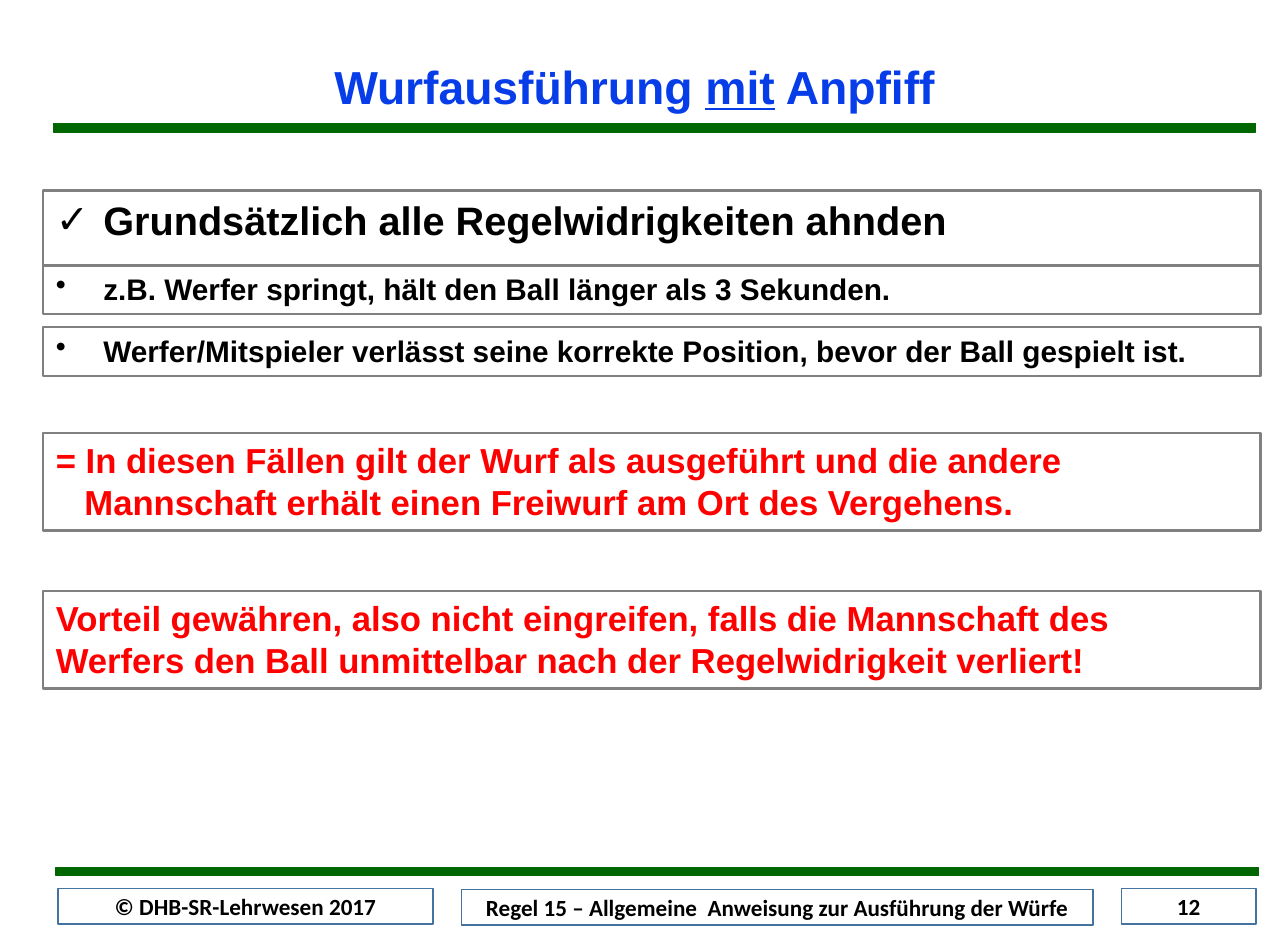
"""Build the slide on throws taken after the whistle."""
from lxml import etree
from pptx import Presentation
from pptx import util as u
from pptx.dml.color import RGBColor
from pptx.enum import shapes, text
from pptx.oxml import ns

WIDTH, HEIGHT = u.Inches(10.83), u.Inches(7.92)
COLOURS = {"title": "063DE8", "bar": "006600", "panel": "808080", "footer": "43739E",
           "paper": "FFFFFF", "plain": "000000", "alert": "FF0000"}
PANEL_LEFT, PANEL_WIDTH = 3.32, 94.55
PANEL_HEIGHTS = {18: 5.18, 24: 6.44}
ALERT_SIZE, ALERT_HEIGHT = 21, 10.35
HANG = 0.4


def colour(name):
    """Return the named colour."""
    return RGBColor.from_string(COLOURS[name])


def place(box, left, top, width, height):
    """Move a box to percentages of the slide's size."""
    box.left, box.width = (int(WIDTH * share / 100) for share in (left, width))
    box.top, box.height = (int(HEIGHT * share / 100) for share in (top, height))


def add_rectangle(page, area, fill=None, line=None, weight=1):
    """Add a flat rectangle with an optional fill and line."""
    box = page.shapes.add_shape(shapes.MSO_SHAPE.RECTANGLE, 0, 0, 0, 0)
    place(box, *area)
    box.shadow.inherit = False
    outline(box, fill, line, weight)
    return box


def outline(box, fill, line, weight):
    """Set the fill and line of a box."""
    if fill:
        box.fill.solid()
        box.fill.fore_color.rgb = colour(fill)
    else:
        box.fill.background()
    if line:
        box.line.color.rgb = colour(line)
        box.line.width = u.Pt(weight)
    else:
        box.line.fill.background()


def add_span(paragraph, words, size, tint, font="Arial", underline=None):
    """Add one bold run."""
    span = paragraph.add_run()
    span.text = words
    span.font.name, span.font.size = font, u.Pt(size)
    span.font.bold, span.font.underline = True, underline
    span.font.color.rgb = colour(tint)


def indent(paragraph, left, first=0, bullet=None):
    """Set a paragraph's indents in inches and its bullet."""
    properties = paragraph._p.get_or_add_pPr()
    properties.set("marL", str(u.Inches(left)))
    properties.set("indent", str(u.Inches(first)))
    if bullet:
        etree.SubElement(properties, ns.qn("a:buChar")).set("char", bullet)


def fill_panel(box, lines, size, tint, bullet=None):
    """Write left-aligned lines into a grey-edged panel."""
    frame = box.text_frame
    frame.word_wrap = True
    frame.auto_size = text.MSO_AUTO_SIZE.SHAPE_TO_FIT_TEXT
    frame.vertical_anchor = text.MSO_ANCHOR.TOP
    frame.margin_left = frame.margin_right = u.Inches(0.11)
    frame.margin_top = frame.margin_bottom = u.Inches(0.05)
    for number, (words, left) in enumerate(lines):
        paragraph = frame.add_paragraph() if number else frame.paragraphs[0]
        indent(paragraph, left, -HANG if bullet else 0, bullet)
        paragraph.alignment = text.PP_ALIGN.LEFT
        paragraph.space_before = u.Pt(0)
        add_span(paragraph, words, size, tint)


def add_point(page, top, words, size, bullet, box=None):
    """Add a bulleted panel, or turn the given placeholder into one."""
    area = PANEL_LEFT, top, PANEL_WIDTH, PANEL_HEIGHTS[size]
    if box is None:
        box = add_rectangle(page, area)
    place(box, *area)
    outline(box, None, "panel", 1.5)
    fill_panel(box, [(words, HANG)], size, "plain", bullet)


def add_alert(page, top, lines):
    """Add a panel with red text."""
    area = PANEL_LEFT, top, PANEL_WIDTH, ALERT_HEIGHT
    box = add_rectangle(page, area, line="panel", weight=1.5)
    fill_panel(box, lines, ALERT_SIZE, "alert")


def add_footer(page, left, top, width, words):
    """Add a framed footer label."""
    box = add_rectangle(page, (left, top, width, 3.79), "paper", "footer")
    box.text_frame.word_wrap = True
    box.text_frame.vertical_anchor = text.MSO_ANCHOR.MIDDLE
    paragraph = box.text_frame.paragraphs[0]
    paragraph.alignment = text.PP_ALIGN.CENTER
    add_span(paragraph, words, 14, "plain", "Calibri")


def write_title(box):
    """Write the heading with its underlined word."""
    place(box, 23.08, 6.19, 52.35, 6.69)
    frame = box.text_frame
    frame.word_wrap = True
    frame.auto_size = text.MSO_AUTO_SIZE.NONE
    frame.vertical_anchor = text.MSO_ANCHOR.TOP
    paragraph = frame.paragraphs[0]
    paragraph.alignment = text.PP_ALIGN.CENTER
    paragraph.line_spacing = 0.9
    for words, underline in (("Wurfausführung ", False), ("mit", True), (" Anpfiff", False)):
        add_span(paragraph, words, 28, "title", underline=underline)


def main():
    """Build and save the deck."""
    deck = Presentation()
    deck.slide_width, deck.slide_height = WIDTH, HEIGHT
    page = deck.slides.add_slide(deck.slide_layouts[1])
    write_title(page.shapes.title)
    for left, top in ((4.16, 13.13), (4.34, 92.05)):
        add_rectangle(page, (left, top, 93.35, 0.88), "bar", "bar", 0.75)
    add_point(page, 20.2, "Grundsätzlich alle Regelwidrigkeiten ahnden", 24, "✓",
              page.placeholders[1])
    add_point(page, 28.16, "z.B. Werfer springt, hält den Ball länger als 3 Sekunden.", 18, "•")
    add_point(page, 34.72, "Werfer/Mitspieler verlässt seine korrekte Position, "
              "bevor der Ball gespielt ist.", 18, "•")
    add_alert(page, 45.96, [
        ("= In diesen Fällen gilt der Wurf als ausgeführt und die andere", 0),
        ("Mannschaft erhält einen Freiwurf am Ort des Vergehens.", 0.24)])
    add_alert(page, 62.75, [
        ("Vorteil gewähren, also nicht eingreifen, falls die Mannschaft des Werfers "
         "den Ball unmittelbar nach der Regelwidrigkeit verliert!", 0)])
    add_footer(page, 4.52, 94.32, 29.09, "© DHB-SR-Lehrwesen 2017")
    add_footer(page, 35.83, 94.44, 49.03,
               "Regel 15 – Allgemeine  Anweisung zur Ausführung der Würfe")
    add_footer(page, 87.07, 94.32, 10.43, "12")
    deck.save("out.pptx")


if __name__ == "__main__":
    main()
